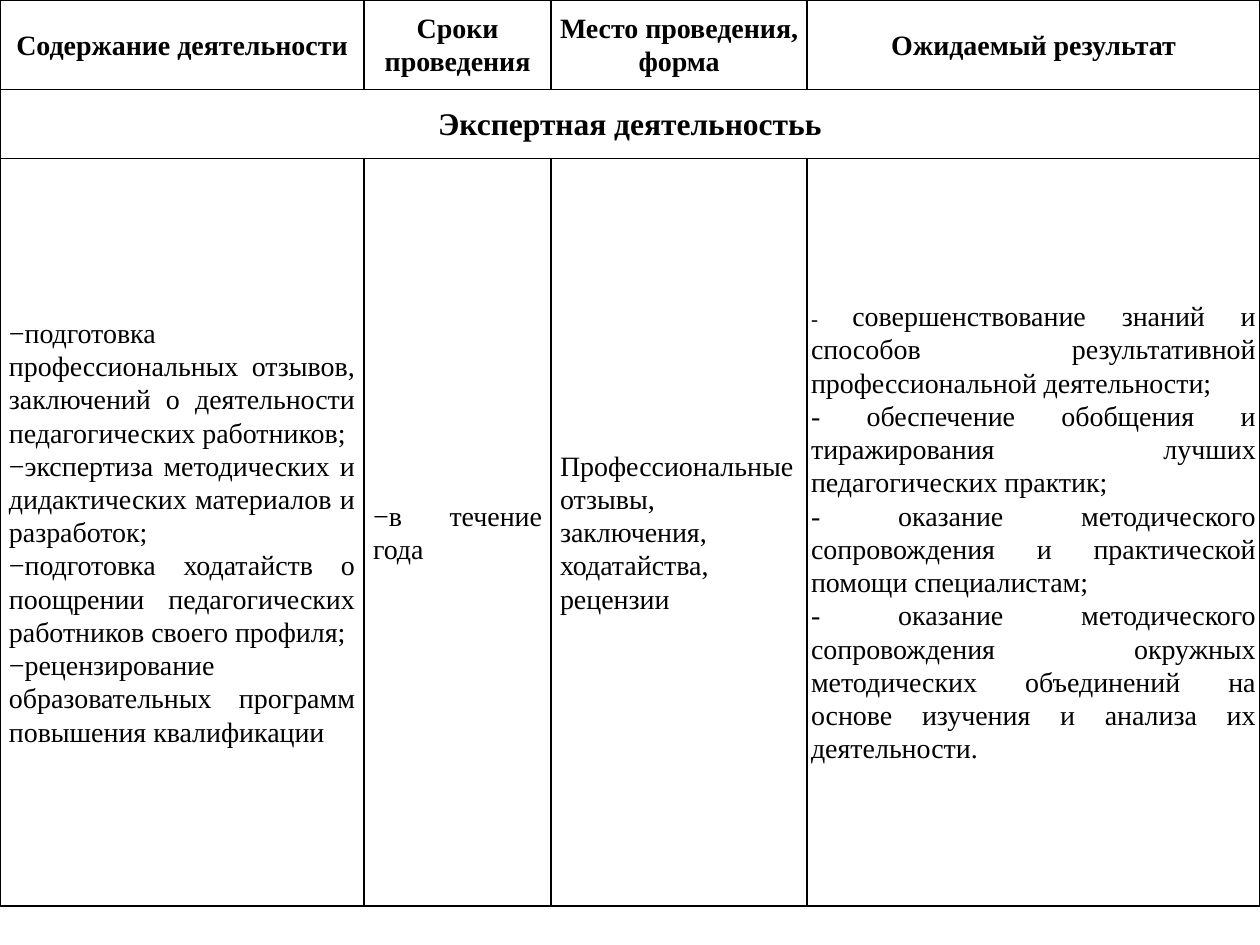
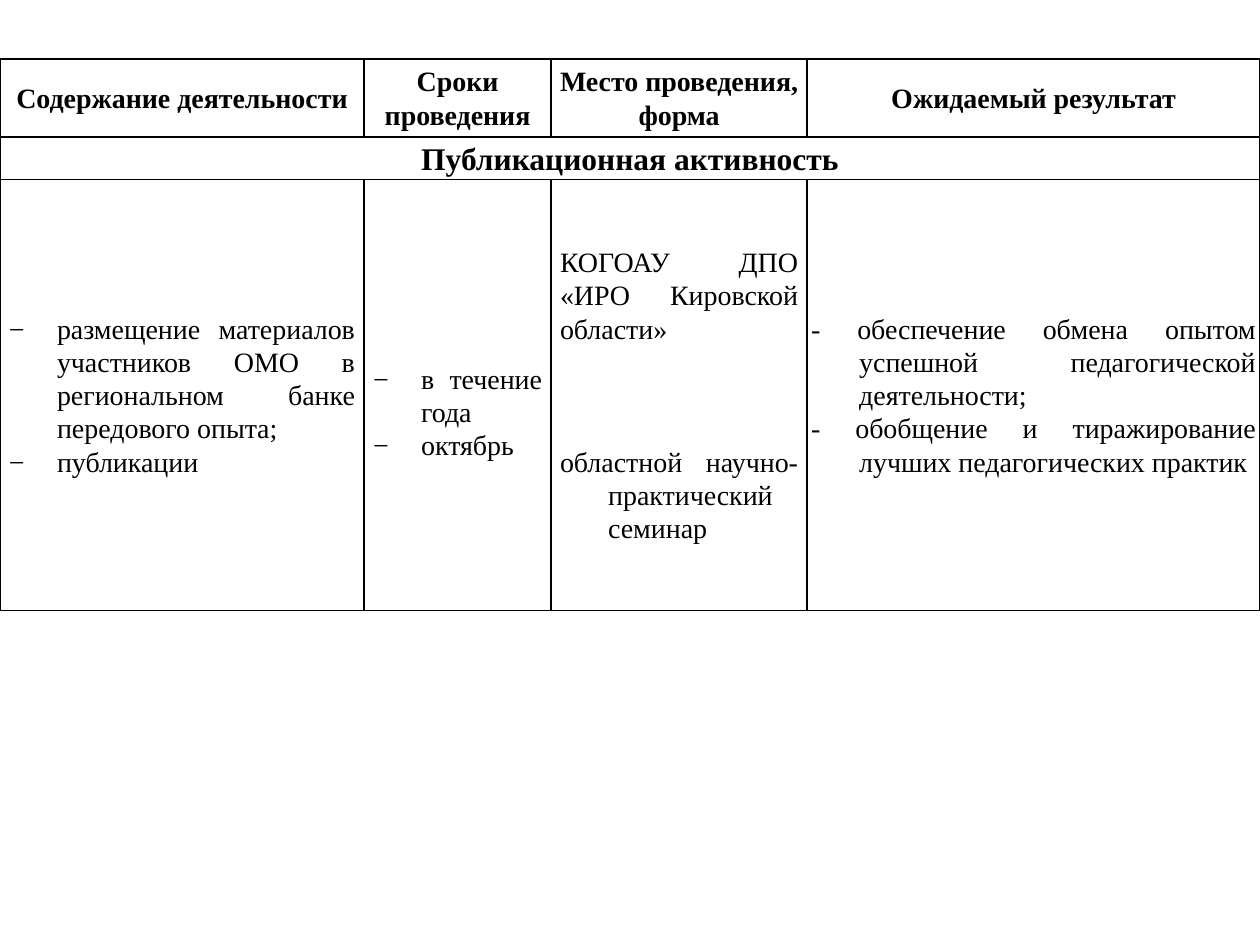
from dataclasses import dataclass
from lxml.etree import SubElement
from pptx import Presentation
from pptx.dml.color import RGBColor
from pptx.enum.text import MSO_ANCHOR as Anchor, PP_ALIGN as Align
from pptx.oxml.ns import qn
from pptx.util import Cm, Pt


@dataclass(frozen=True)
class Theme:
    font: str = "Times New Roman"
    ink: RGBColor = RGBColor(0, 0, 0)
    paper: RGBColor = RGBColor(255, 255, 255)
    body_size: int = 16
    section_size: int = 18
    small_size: int = 12
    line_spacing: float = 1.07
    border: int = 1
    narrow_inset: float = 0.08
    wide_inset: float = 0.18
    hanging: float = 0.97
    tab: float = 0.53


@dataclass(frozen=True)
class Item:
    text: str
    lead: str = ""
    bullet: str = ""
    left: float = 0
    hangs: bool = False
    gap: int = 0


THEME = Theme()
COLUMN_WIDTHS = (7.34, 3.77, 5.16, 9.13)
HEADINGS = ("Содержание деятельности", "Сроки проведения",
            "Место проведения, форма", "Ожидаемый результат")
INSETS = (THEME.wide_inset,) * 3 + (THEME.narrow_inset,)


def dashed(*texts, left=0):
    return [Item(text, bullet="−", left=left, hangs=True) for text in texts]


def hanging(text, gap=0):
    return Item(text, left=THEME.hanging, hangs=True, gap=gap)


def draw_borders(cell):
    properties = cell._tc.get_or_add_tcPr()
    for side in ("a:lnL", "a:lnR", "a:lnT", "a:lnB"):
        line = SubElement(properties, qn(side), w=str(Pt(THEME.border)))
        fill = SubElement(line, qn("a:solidFill"))
        SubElement(fill, qn("a:srgbClr"), val=str(THEME.ink))


def style_cell(cell, inset):
    draw_borders(cell)
    cell.fill.solid()
    cell.fill.fore_color.rgb = THEME.paper
    cell.vertical_anchor = Anchor.MIDDLE
    cell.margin_left = cell.margin_right = Cm(inset)
    cell.margin_top = cell.margin_bottom = 0


def set_hanging(para, item):
    properties = para._p.get_or_add_pPr()
    properties.set("marL", str(Cm(item.left)))
    properties.set("indent", str(-Cm(THEME.hanging)))
    if item.bullet:
        SubElement(properties, qn("a:buFont"), typeface=THEME.font)
        SubElement(properties, qn("a:buChar"), char=item.bullet)
    tabs = SubElement(properties, qn("a:tabLst"))
    SubElement(tabs, qn("a:tab"), pos=str(Cm(THEME.tab)), algn="l")


def add_span(para, text, size, bold):
    span = para.add_run()
    span.text = text
    span.font.name = THEME.font
    span.font.size = Pt(size)
    span.font.bold = bold
    span.font.color.rgb = THEME.ink


def write_cell(cell, items, align, size=THEME.body_size, bold=False):
    frame = cell.text_frame
    for index, item in enumerate(items):
        para = frame.add_paragraph() if index else frame.paragraphs[0]
        if item.hangs:
            set_hanging(para, item)
        para.alignment = align
        para.line_spacing = THEME.line_spacing
        if item.gap:
            para.space_before = Pt(item.gap)
        if item.lead:
            add_span(para, item.lead, THEME.small_size, bold)
        add_span(para, item.text, size, bold)


def add_plan_page(deck, top, row_heights, section, columns):
    page = deck.slides.add_slide(deck.slide_layouts[6])
    box = page.shapes.add_table(3, len(columns), 0, Cm(top), deck.slide_width,
                                Cm(sum(row_heights)))
    table = box.table
    table.first_row = table.horz_banding = False
    for column, width in zip(table.columns, COLUMN_WIDTHS):
        column.width = Cm(width)
    for row, height in zip(table.rows, row_heights):
        row.height = Cm(height)

    for index, (heading, items, inset) in enumerate(zip(HEADINGS, columns, INSETS)):
        heading_cell, section_cell, body_cell = (table.cell(row, index) for row in range(3))
        style_cell(heading_cell, THEME.narrow_inset)
        style_cell(section_cell, THEME.narrow_inset)
        style_cell(body_cell, inset)
        write_cell(heading_cell, [Item(heading)], Align.CENTER, bold=True)
        write_cell(body_cell, items, Align.JUSTIFY)

    banner = table.cell(1, 0)
    banner.merge(table.cell(1, len(columns) - 1))
    write_cell(banner, [Item(section)], Align.CENTER, THEME.section_size, True)
    return table


def add_expert_page(deck):
    add_plan_page(deck, 0, (1.8, 1.4, 15.06), "Экспертная деятельностьь", [
        dashed("подготовка профессиональных отзывов, заключений о деятельности "
               "педагогических работников;",
               "экспертиза методических и дидактических материалов и разработок;",
               "подготовка ходатайств о поощрении педагогических работников своего профиля;",
               "рецензирование образовательных программ повышения квалификации"),
        dashed("в течение года"),
        [Item("Профессиональные отзывы, заключения,"), Item("ходатайства,"), Item("рецензии")],
        [Item("совершенствование знаний и способов результативной "
              "профессиональной деятельности;", lead="- "),
         Item("- обеспечение обобщения и тиражирования лучших педагогических практик;"),
         Item("- оказание методического сопровождения и практической помощи специалистам;"),
         Item("- оказание методического сопровождения окружных методических объединений "
              "на основе изучения и анализа их деятельности.")],
    ])


def add_publication_page(deck):
    table = add_plan_page(deck, 1.19, (1.57, 0.86, 8.69), "Публикационная активность", [
        dashed("размещение материалов участников ОМО в региональном банке передового опыта;",
               "публикации", left=THEME.hanging),
        dashed("в течение года", "октябрь", left=THEME.hanging),
        [Item("КОГОАУ ДПО «ИРО Кировской области»"),
         hanging("областной научно-практический семинар", gap=57)],
        [hanging("- обеспечение обмена опытом успешной педагогической деятельности;"),
         hanging("- обобщение и тиражирование лучших педагогических практик")],
    ])
    table.cell(2, 1).margin_top = Cm(0.67)


def main():
    deck = Presentation()
    deck.slide_width, deck.slide_height = Cm(25.4), Cm(19.05)
    add_expert_page(deck)
    add_publication_page(deck)
    deck.save("out.pptx")


if __name__ == "__main__":
    main()
